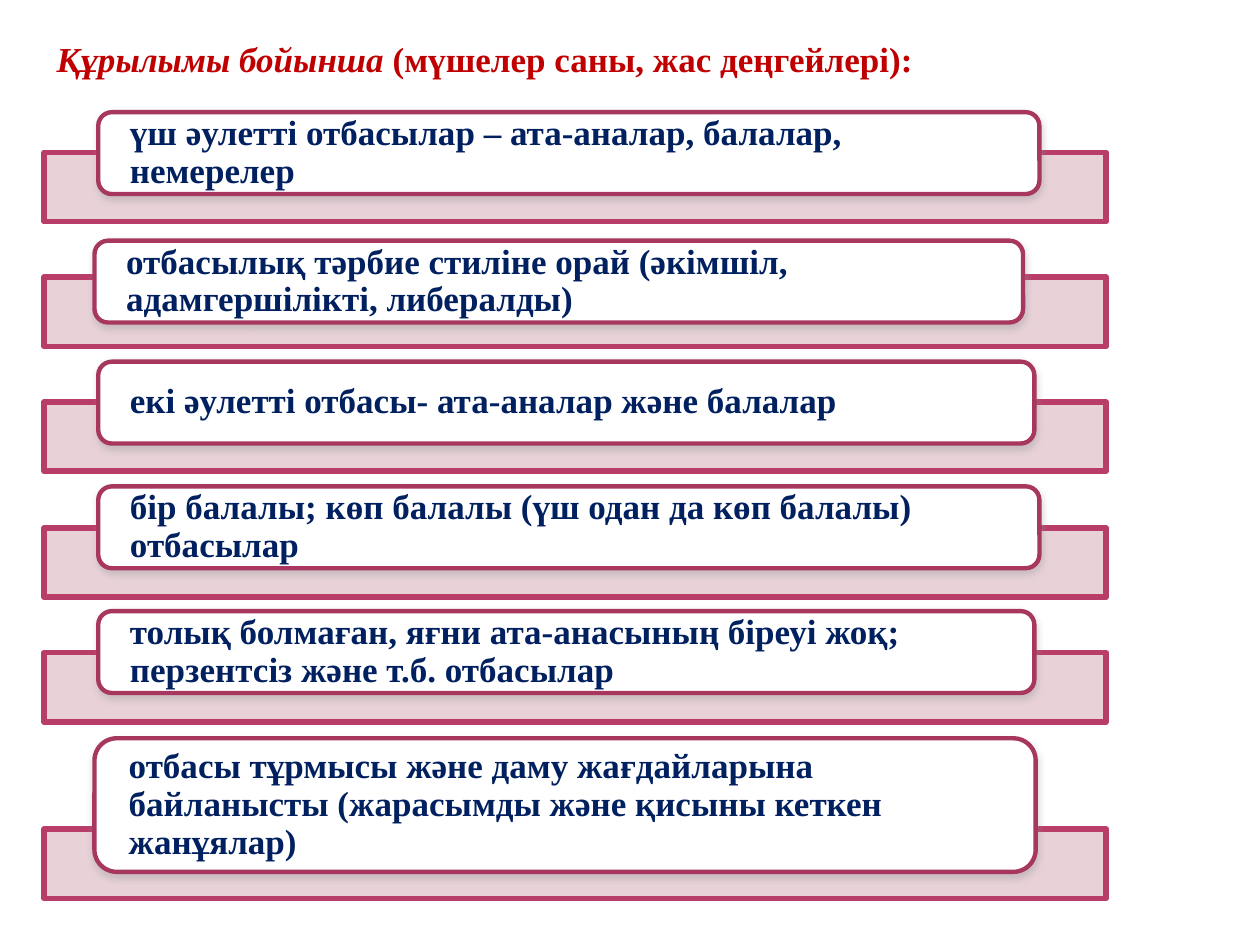
"""Build a slide that lists family types by structure as stacked cards on bands."""
from dataclasses import dataclass

from lxml import etree
from pptx import Presentation
from pptx.dml.color import RGBColor
from pptx.enum import shapes, text
from pptx.oxml.ns import qn
from pptx.util import Inches, Pt


@dataclass(frozen=True)
class Theme:
    font: str = "Times New Roman"
    size: float = 20
    title: str = "C00000"
    ink: str = "002060"
    band_fill: str = "E6CED4"
    band_line: str = "B83D68"
    band_weight: float = 3.15
    card_fill: str = "FFFFFF"
    card_line: str = "A7375E"
    card_weight: float = 2.5
    shadow: str = "979797"


THEME = Theme()
TITLE = [("Құрылымы бойынша ", True), ("(мүшелер саны, жас деңгейлері):", False)]
TITLE_BOX = (0.35, 0.25, 7.09, 0.44)
BAND_LEFT, BAND_WIDTH, BAND_HEIGHT = 0.35, 8.43, 0.55
CARD_INSET = 0.22
FAMILIES = [
    ("үш əулетті отбасылар – ата-аналар, балалар, немерелер",
     1.21, (0.78, 0.89, 7.47, 0.65)),
    ("отбасылық тəрбие стиліне орай (əкімшіл, адамгершілікті, либералды)",
     2.2, (0.75, 1.91, 7.37, 0.65)),
    ("екі əулетті отбасы- ата-аналар жəне балалар",
     3.19, (0.78, 2.87, 7.43, 0.65)),
    ("бір балалы; көп балалы (үш одан да көп балалы) отбасылар",
     4.19, (0.78, 3.86, 7.47, 0.65)),
    ("толық болмаған, яғни ата-анасының біреуі жоқ; перзентсіз жəне т.б. отбасылар",
     5.18, (0.78, 4.85, 7.43, 0.65)),
    ("отбасы тұрмысы жəне даму жағдайларына байланысты (жарасымды жəне қисыны кеткен жанұялар)",
     6.58, (0.75, 5.86, 7.47, 1.06)),
]


def style_paragraph(p, color):
    p.alignment = text.PP_ALIGN.LEFT
    p.font.name = THEME.font
    p.font.size = Pt(THEME.size)
    p.font.bold = True
    p.font.color.rgb = RGBColor.from_string(color)


def add_title(s):
    sp = s.shapes.title
    sp.left, sp.top, sp.width, sp.height = map(Inches, TITLE_BOX)
    tf = sp.text_frame
    tf.word_wrap = True
    tf.auto_size = text.MSO_AUTO_SIZE.SHAPE_TO_FIT_TEXT
    tf.vertical_anchor = text.MSO_ANCHOR.TOP
    p = tf.paragraphs[0]
    style_paragraph(p, THEME.title)
    for words, italic in TITLE:
        r = p.add_run()
        r.text = words
        r.font.italic = italic


def add_box(s, kind, box, fill, line, weight):
    sp = s.shapes.add_shape(kind, *map(Inches, box))
    sp.shadow.inherit = False
    sp.fill.solid()
    sp.fill.fore_color.rgb = RGBColor.from_string(fill)
    sp.line.color.rgb = RGBColor.from_string(line)
    sp.line.width = Pt(weight)
    return sp


def set_alpha(color, percent):
    etree.SubElement(color, qn("a:alpha"), val=str(percent * 1000))


def add_band(s, top):
    sp = add_box(s, shapes.MSO_SHAPE.RECTANGLE, (BAND_LEFT, top, BAND_WIDTH, BAND_HEIGHT),
                 THEME.band_fill, THEME.band_line, THEME.band_weight)
    set_alpha(sp.element.spPr.find(qn("a:solidFill")).find(qn("a:srgbClr")), 90)


def add_card(s, words, box):
    sp = add_box(s, shapes.MSO_SHAPE.ROUNDED_RECTANGLE, box,
                 THEME.card_fill, THEME.card_line, THEME.card_weight)
    shadow = etree.SubElement(sp.element.spPr.find(qn("a:effectLst")), qn("a:outerShdw"),
                              blurRad=str(Pt(4)), dist=str(Pt(2)), dir="5400000",
                              rotWithShape="0")
    set_alpha(etree.SubElement(shadow, qn("a:srgbClr"), val=THEME.shadow), 38)
    tf = sp.text_frame
    tf.word_wrap = True
    tf.vertical_anchor = text.MSO_ANCHOR.MIDDLE
    tf.margin_left = tf.margin_right = Inches(CARD_INSET)
    tf.margin_top = tf.margin_bottom = 0
    p = tf.paragraphs[0]
    p.text = words
    p.line_spacing = 0.9
    style_paragraph(p, THEME.ink)


def main():
    prs = Presentation()
    prs.slide_width, prs.slide_height = Inches(10), Inches(7.5)
    s = prs.slides.add_slide(prs.slide_layouts[5])
    add_title(s)
    for words, band_top, card_box in FAMILIES:
        add_band(s, band_top)
        add_card(s, words, card_box)
    prs.save("out.pptx")


if __name__ == "__main__":
    main()
